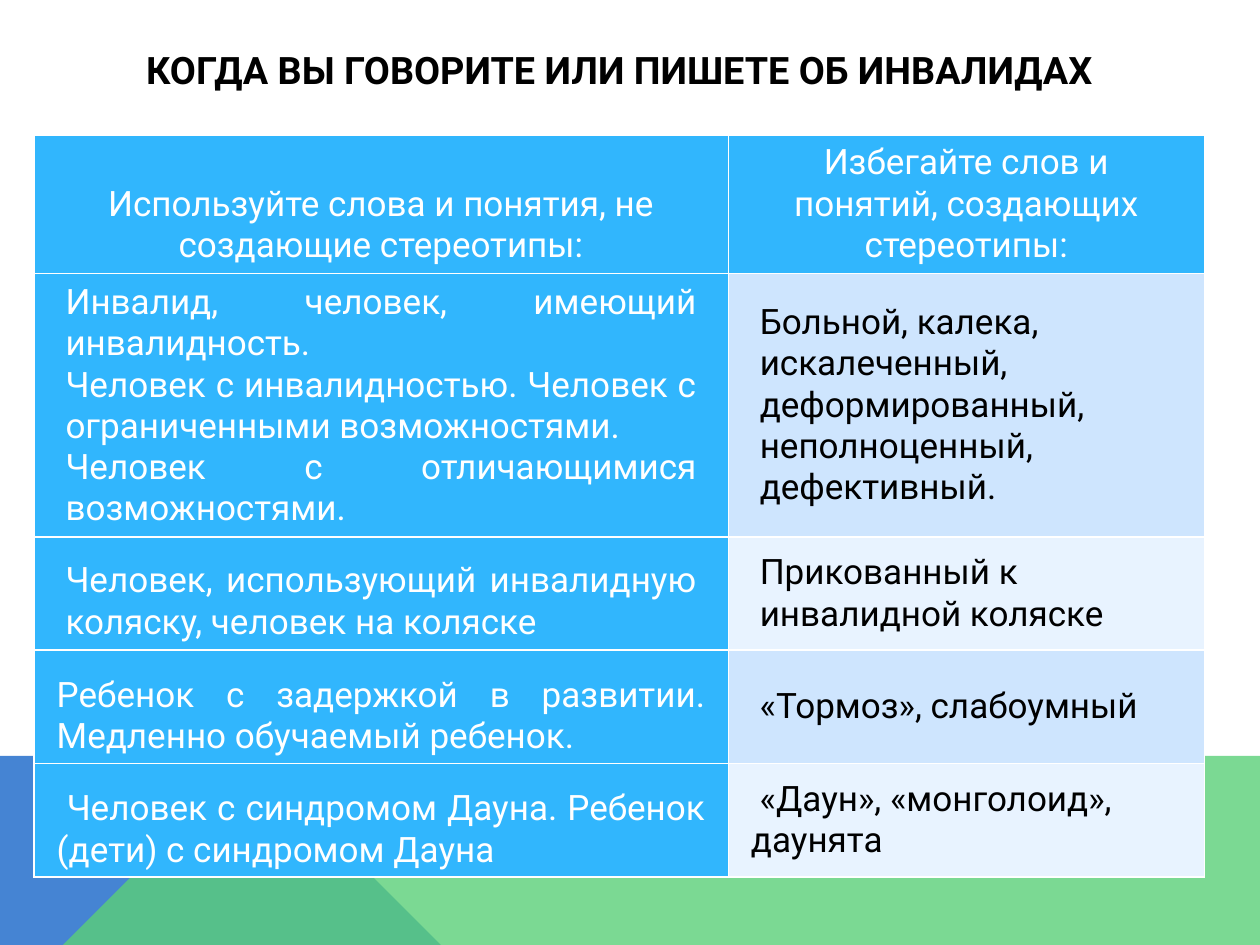
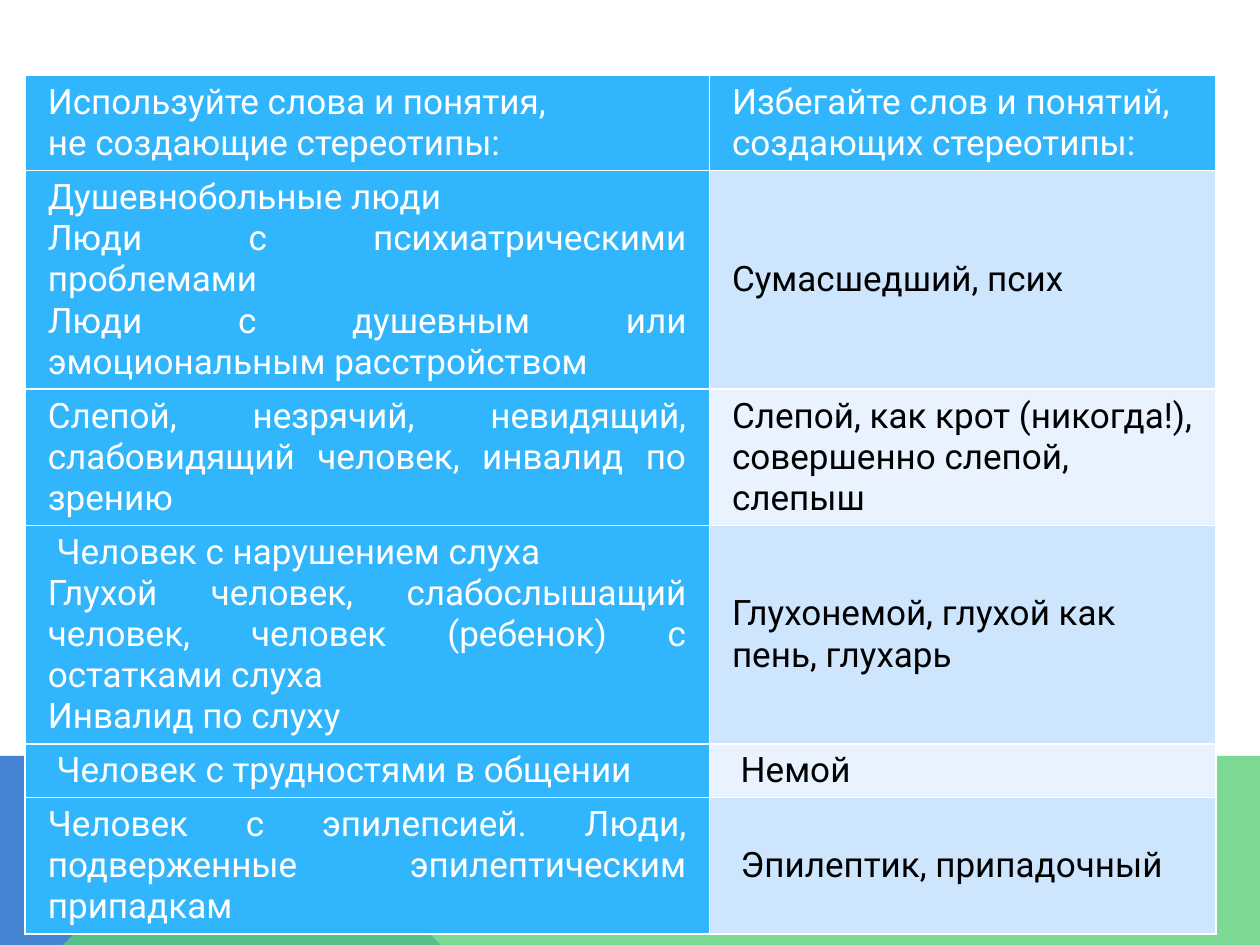
"""Build two slides of tables on wording to use and to avoid about disability."""
from dataclasses import dataclass
from typing import Any

from lxml.etree import SubElement
from pptx import Presentation
from pptx.dml.color import RGBColor
from pptx.enum.text import MSO_ANCHOR, PP_ALIGN
from pptx.oxml import parse_xml
from pptx.oxml.ns import nsdecls, qn
from pptx.util import Inches, Length, Pt


@dataclass(frozen=True)
class Theme:
    font: str = "Roboto"
    title_size: float = 21.6
    table_size: float = 20
    border_width: float = 1
    dark: str = "000000"
    light: str = "FFFFFF"
    accent: str = "31B6FD"
    stripes: tuple[str, str] = ("CEE5FE", "E8F3FF")
    blue_band: str = "4584D3"
    green_band: str = "5BD078"


@dataclass(frozen=True)
class Band:
    points: tuple[tuple[float, float], ...]
    color: str
    opacity: int = 100


@dataclass(frozen=True)
class Inset:
    side: float
    edge: float


@dataclass(frozen=True)
class Wording:
    height: float
    use: tuple[str, ...]
    avoid: tuple[str, ...]
    inset: Inset = Inset(0.18, 0.05)


@dataclass(frozen=True)
class Glossary:
    left: float
    top: float
    columns: tuple[float, float]
    header_align: PP_ALIGN
    rows: tuple[Wording, ...]


THEME = Theme()
WIDE = Inset(0.25, 0.06)
TITLE = "КОГДА ВЫ ГОВОРИТЕ ИЛИ ПИШЕТЕ ОБ ИНВАЛИДАХ"

BANDS = (
    Band(((0, 7.5), (0, 5.52), (2.23, 5.52), (3.91, 7.5)), THEME.blue_band),
    Band(((0, 7.5), (2.23, 5.52), (10, 5.53), (10, 7.5)), THEME.green_band, 80),
)

GENERAL = Glossary(0.27, 1.07, (5.51, 3.78), PP_ALIGN.CENTER, (
    Wording(1.1, ("Используйте слова и понятия, не создающие стереотипы:",),
            ("Избегайте слов и понятий, создающих стереотипы:",), WIDE),
    Wording(2.09, ("Инвалид, человек, имеющий инвалидность.",
                   "Человек с инвалидностью. Человек с ограниченными возможностями.",
                   "Человек с отличающимися возможностями."),
            ("Больной, калека, искалеченный, деформированный, неполноценный,",
             "дефективный."), WIDE),
    Wording(0.9, ("Человек, использующий инвалидную коляску, человек на коляске",),
            ("Прикованный к инвалидной коляске",), WIDE),
    Wording(0.9, ("Ребенок с задержкой в развитии. Медленно обучаемый ребенок.",),
            (" «Тормоз», слабоумный",)),
    Wording(0.9, (" Человек с синдромом Дауна. Ребенок (дети) с синдромом Дауна",),
            (" «Даун», «монголоид», даунята",)),
))

CONDITIONS = Glossary(0.2, 0.6, (5.43, 4.02), PP_ALIGN.JUSTIFY, (
    Wording(0.74, ("Используйте слова и понятия,", "не создающие стереотипы:"),
            ("Избегайте слов и понятий,", "создающих стереотипы:")),
    Wording(1.73, ("Душевнобольные люди", "Люди с психиатрическими проблемами",
                   "Люди с душевным или эмоциональным расстройством"),
            ("Сумасшедший, псих",)),
    Wording(1.07, ("Слепой, незрячий, невидящий, слабовидящий человек, "
                   "инвалид по зрению",),
            ("Слепой, как крот (никогда!), совершенно слепой, слепыш",)),
    Wording(1.73, (" Человек с нарушением слуха",
                   "Глухой человек, слабослышащий человек, человек (ребенок) "
                   "с остатками слуха",
                   "Инвалид по слуху"),
            ("Глухонемой, глухой как пень, глухарь",)),
    Wording(0.42, (" Человек с трудностями в общении",), (" Немой",)),
    Wording(1.07, ("Человек с эпилепсией. Люди, подверженные эпилептическим "
                   "припадкам",),
            (" Эпилептик, припадочный",)),
))


def apply(target: Any, values: dict[str, Any]) -> None:
    """Set every named attribute on the target."""
    for name, value in values.items():
        setattr(target, name, value)


def write(frame: Any, lines: tuple[str, ...], align: PP_ALIGN, size: float,
          color: str, bold: bool = False) -> None:
    """Fill a text frame with one formatted paragraph per line."""
    for index, line in enumerate(lines):
        paragraph = frame.paragraphs[0] if index == 0 else frame.add_paragraph()
        paragraph.alignment = align
        run = paragraph.add_run()
        run.text = line
        apply(run.font, {"name": THEME.font, "size": Pt(size), "bold": bold})
        run.font.color.rgb = RGBColor.from_string(color)


def add_bands(slide: Any, master: Any) -> None:
    """Draw the bottom bands and place them behind everything on the master."""
    for depth, band in enumerate(BANDS):
        outline = slide.shapes.build_freeform(*band.points[0], scale=Inches(1))
        outline.add_line_segments(band.points[1:], close=True)
        shape = outline.convert_to_shape()
        shape.shadow.inherit = False
        shape.line.fill.background()
        shape.fill.solid()
        shape.fill.fore_color.rgb = RGBColor.from_string(band.color)
        if band.opacity < 100:
            tint = shape.element.spPr.find(f".//{qn('a:srgbClr')}")
            SubElement(tint, qn("a:alpha"), val=str(band.opacity * 1000))
        master.shapes.element.insert(2 + depth, shape.element)


def add_borders(cell: Any) -> None:
    """Give a cell a thin light line on each side."""
    properties = cell._tc.get_or_add_tcPr()
    for index, side in enumerate("LRTB"):
        properties.insert(index, parse_xml(
            f'<a:ln{side} {nsdecls("a")} w="{Pt(THEME.border_width)}"><a:solidFill>'
            f'<a:srgbClr val="{THEME.light}"/></a:solidFill></a:ln{side}>'))


def fill_cell(cell: Any, lines: tuple[str, ...], inset: Inset, align: PP_ALIGN,
              anchor: MSO_ANCHOR, fill: str, color: str) -> None:
    """Write and format one table cell."""
    side, edge = Inches(inset.side), Inches(inset.edge)
    apply(cell, {"margin_left": side, "margin_right": side, "margin_top": edge,
                 "margin_bottom": edge, "vertical_anchor": anchor})
    cell.fill.solid()
    cell.fill.fore_color.rgb = RGBColor.from_string(fill)
    add_borders(cell)
    write(cell.text_frame, lines, align, THEME.table_size, color)


def add_glossary(slide: Any, glossary: Glossary) -> None:
    """Add a two-column table of words to use and words to avoid."""
    width: Length = Inches(sum(glossary.columns))
    height: Length = Inches(sum(row.height for row in glossary.rows))
    table = slide.shapes.add_table(
        len(glossary.rows), 2, Inches(glossary.left), Inches(glossary.top),
        width, height).table
    apply(table, {"first_row": False, "horz_banding": False})
    for column, column_width in zip(table.columns, glossary.columns):
        column.width = Inches(column_width)
    for index, row in enumerate(glossary.rows):
        table.rows[index].height = Inches(row.height)
        header = index == 0
        use_align = glossary.header_align if header else PP_ALIGN.JUSTIFY
        fill_cell(table.cell(index, 0), row.use, row.inset, use_align,
                  MSO_ANCHOR.BOTTOM, THEME.accent, THEME.light)
        if header:
            avoid_style = (use_align, MSO_ANCHOR.BOTTOM, THEME.accent, THEME.light)
        else:
            avoid_style = (PP_ALIGN.LEFT, MSO_ANCHOR.MIDDLE,
                           THEME.stripes[(index - 1) % 2], THEME.dark)
        fill_cell(table.cell(index, 1), row.avoid, row.inset, *avoid_style)


def add_title(slide: Any) -> None:
    """Place and format the slide title."""
    title = slide.shapes.title
    apply(title, {"left": Inches(1.06), "top": Inches(0.36),
                  "width": Inches(8.28), "height": Inches(0.38)})
    apply(title.text_frame, {"word_wrap": True, "vertical_anchor": MSO_ANCHOR.MIDDLE})
    write(title.text_frame, (TITLE,), PP_ALIGN.LEFT, THEME.title_size,
          THEME.dark, bold=True)


def main() -> None:
    """Build and save the presentation."""
    deck = Presentation()
    apply(deck, {"slide_width": Inches(10), "slide_height": Inches(7.5)})
    general = deck.slides.add_slide(deck.slide_layouts.get_by_name("Title Only"))
    conditions = deck.slides.add_slide(deck.slide_layouts.get_by_name("Blank"))
    add_bands(general, deck.slide_master)
    add_title(general)
    add_glossary(general, GENERAL)
    add_glossary(conditions, CONDITIONS)
    deck.save("out.pptx")


if __name__ == "__main__":
    main()
